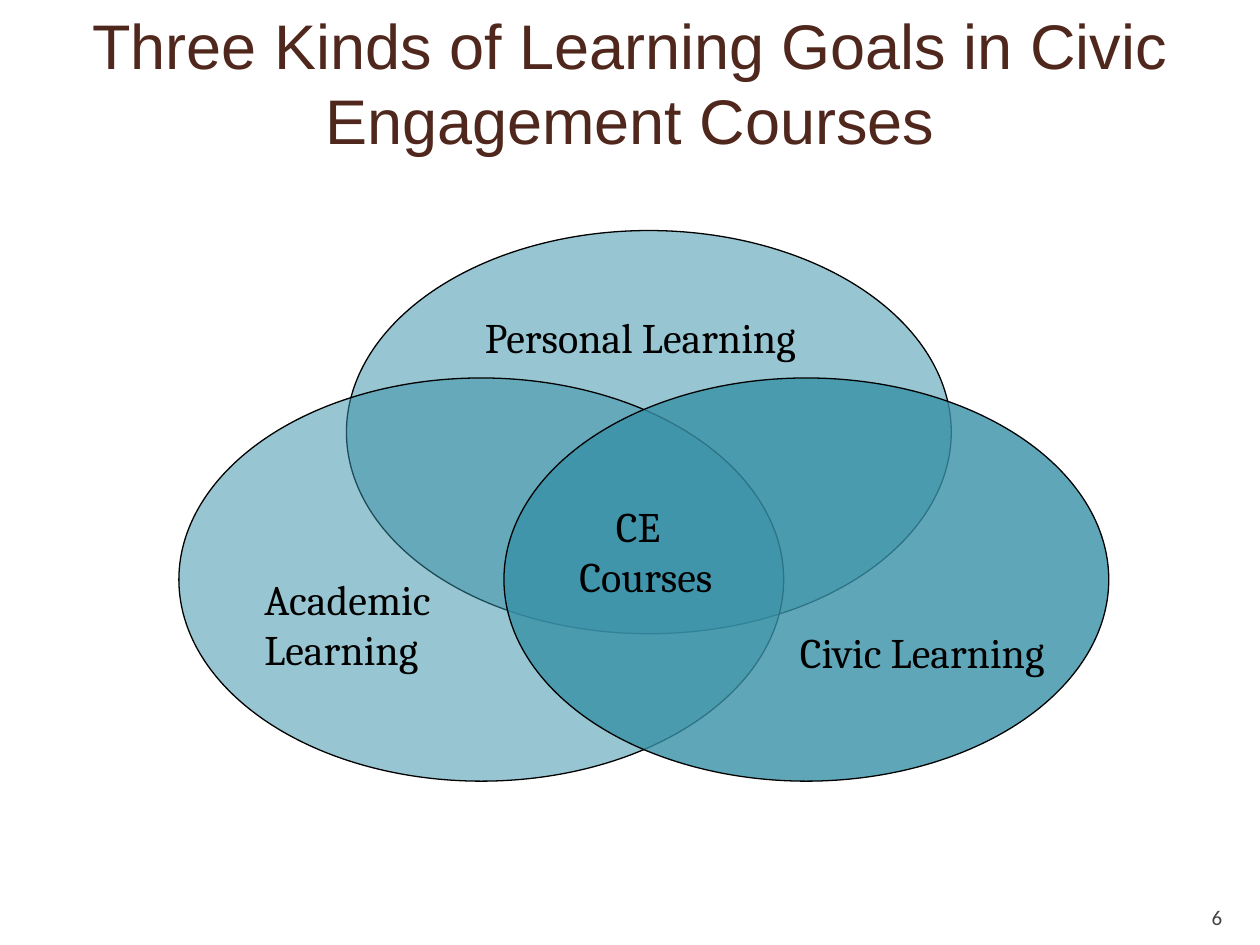
from dataclasses import dataclass

from lxml import etree
from pptx import Presentation
from pptx import util as u
from pptx.dml.color import RGBColor
from pptx.enum import shapes, text
from pptx.oxml.ns import qn


@dataclass(frozen=True)
class Theme:
    """Colours, fonts and type sizes of the slide."""
    ink: str = "000000"
    teal: str = "3891A7"
    brown: str = "4F271C"
    grey: str = "454545"
    head: str = "Arial"
    body: str = "Cambria"
    foot: str = "Calibri"
    big: int = 36
    mid: int = 24
    small: int = 12


def write(frame, words, font, size, color, align=text.PP_ALIGN.LEFT, indent=0):
    """Put one formatted paragraph into a text frame."""
    para = frame.paragraphs[0]
    para.alignment = align
    if indent:
        para._p.get_or_add_pPr().set("indent", str(u.Inches(indent)))
    run = para.add_run()
    run.text = words
    run.font.name = font
    run.font.size = u.Pt(size)
    run.font.color.rgb = RGBColor.from_string(color)


class Page:
    """Holds the theme and the current slide."""

    def __init__(self, slide, theme):
        """Keep the slide and the theme."""
        self.slide = slide
        self.theme = theme

    def oval(self, left, top, wide, high, alpha):
        """Draw a see-through ellipse with a thin outline."""
        oval = self.slide.shapes.add_shape(
            shapes.MSO_SHAPE.OVAL, *map(u.Inches, (left, top, wide, high)))
        oval.shadow.inherit = False
        oval.fill.solid()
        oval.fill.fore_color.rgb = RGBColor.from_string(self.theme.teal)
        tint = oval._element.spPr.find(qn("a:solidFill"))[0]
        etree.SubElement(tint, qn("a:alpha")).set("val", str(alpha * 1000))
        oval.line.color.rgb = RGBColor.from_string(self.theme.ink)
        oval.line.width = u.Pt(0.75)

    def label(self, words, left, top, wide, high, **form):
        """Add a wrapped text box and return its frame."""
        box = self.slide.shapes.add_textbox(
            *map(u.Inches, (left, top, wide, high)))
        frame = box.text_frame
        frame.word_wrap = True
        look = dict(font=self.theme.body, size=self.theme.mid,
                    color=self.theme.ink)
        write(frame, words, **(look | form))
        return frame


def main():
    """Build and save the slide."""
    deck = Presentation()
    deck.slide_width = u.Inches(10)
    deck.slide_height = u.Inches(7.5)
    theme = Theme()
    page = Page(deck.slides.add_slide(deck.slide_layouts[6]), theme)

    foot = page.label("6", 9, 7.08, 0.8, 0.3, font=theme.foot,
                      size=theme.small, color=theme.grey,
                      align=text.PP_ALIGN.RIGHT)
    foot.vertical_anchor = text.MSO_ANCHOR.BOTTOM
    foot.margin_bottom = 0

    for left, top, alpha in ((2.75, 1.83, 52), (1.42, 3, 52), (4, 3, 80)):
        page.oval(left, top, 4.8, 3.2, alpha)

    page.label("CE Courses", 4.5, 3.92, 1.33, 1.51, indent=0.29)
    page.label("Academic Learning", 2, 4.5, 1.92, 0.9)
    page.label("Civic Learning", 6.25, 4.92, 2.92, 0.5)
    page.label("Personal Learning", 3.75, 2.42, 2.83, 0.5)
    page.label("Three Kinds of Learning Goals in Civic Engagement Courses",
               0.5, 0, 9, 1.31, font=theme.head, size=theme.big,
               color=theme.brown, align=text.PP_ALIGN.CENTER)
    deck.save("out.pptx")


if __name__ == "__main__":
    main()
